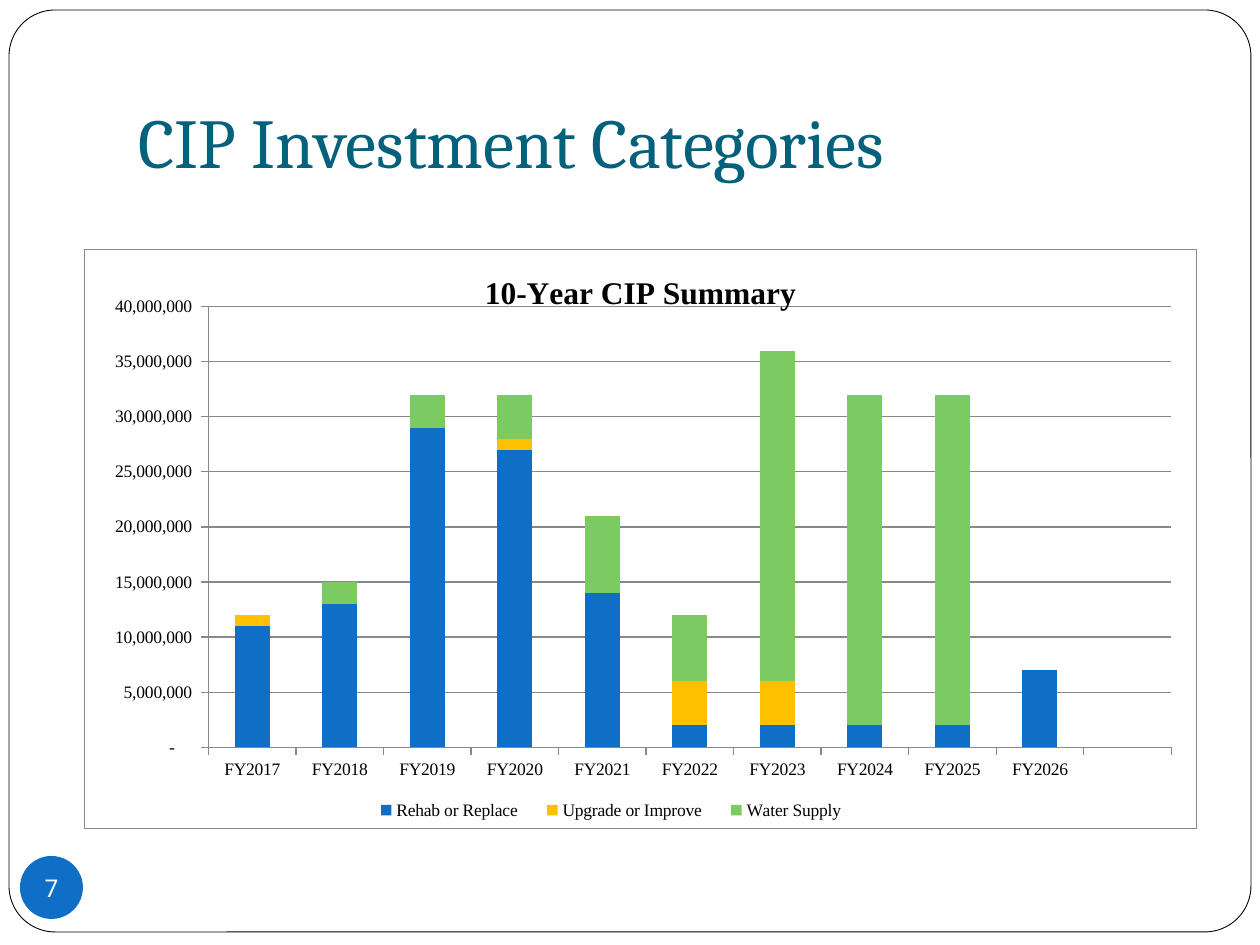
from lxml import etree
from pptx import Presentation, util as u
from pptx.chart.data import CategoryChartData
from pptx.dml.color import RGBColor
from pptx.enum import chart as charts, shapes, text
from pptx.oxml import parse_xml
from pptx.oxml.ns import nsdecls, qn

PX = 914400 / 126
BLUE, YELLOW, GREEN = "0F6FC6", "FFC000", "7CCA62"
BLACK, WHITE, GREY, TEAL = "000000", "FFFFFF", "888888", "04617B"
MILLION = 1_000_000

YEARS = [f"FY{year}" for year in range(2017, 2027)] + [""]  # last slot is blank
# Millions per fiscal year
CATEGORIES = [
    ("Rehab or Replace", BLUE, [11, 13, 29, 27, 14, 2, 2, 2, 2, 7, None]),
    ("Upgrade or Improve", YELLOW, [1, 0, 0, 1, 0, 4, 4, 0, 0, 0, None]),
    ("Water Supply", GREEN, [0, 2, 3, 4, 7, 6, 30, 30, 30, 0, None]),
]


def px(*lengths):
    return [u.Emu(round(length * PX)) for length in lengths]


def color(value):
    return RGBColor.from_string(value)


def style_font(font, name, size, value, bold=False):
    font.name, font.size, font.bold = name, u.Pt(size), bold
    font.color.rgb = color(value)


def style_line(line, value, width):
    line.color.rgb = color(value)
    line.width = u.Pt(width)


def make_layout(chart_size, place, inner=False):
    """Layout of a chart part; place is left, top and perhaps width, height in px."""
    layout = parse_xml(f"<c:layout {nsdecls('c')}><c:manualLayout/></c:layout>")
    settings = [("layoutTarget", "inner")] if inner else []
    settings += [("xMode", "edge"), ("yMode", "edge")]
    settings += [(tag, length / whole)
                 for tag, length, whole in zip("xywh", place, chart_size * 2)]
    for tag, value in settings:
        etree.SubElement(layout[0], qn(f"c:{tag}")).set("val", str(value))
    return layout


class SlideBuilder:
    heading_font, chart_font, number_font = "Cambria", "Times New Roman", "Roboto"

    def __init__(self, slide):
        self.slide = slide

    def shape(self, kind, box, fill, outline=None):
        shape = self.slide.shapes.add_shape(kind, *px(*box))
        shape.shadow.inherit = False
        shape.fill.solid()
        shape.fill.fore_color.rgb = color(fill)
        if outline:
            style_line(shape.line, outline, 0.5)
        else:
            shape.line.fill.background()
        return shape

    def frame(self, box):
        frame = self.shape(shapes.MSO_SHAPE.ROUNDED_RECTANGLE, box, WHITE, BLACK)
        frame.adjustments[0] = 0.05
        self.slide.shapes._spTree.insert(2, frame._element)  # behind the title

    def title(self, box, words):
        title = self.slide.shapes.title
        title.left, title.top, title.width, title.height = px(*box)
        frame = title.text_frame
        frame.text = words
        frame.vertical_anchor = text.MSO_ANCHOR.BOTTOM
        frame.margin_bottom = u.Inches(0.1)
        paragraph = frame.paragraphs[0]
        paragraph.alignment = text.PP_ALIGN.LEFT
        style_font(paragraph.font, self.heading_font, 40, TEAL)

    def badge(self, box, words):
        badge = self.shape(shapes.MSO_SHAPE.OVAL, box, BLUE)
        frame = badge.text_frame
        frame.margin_left = frame.margin_right = 0
        frame.margin_top = frame.margin_bottom = 0
        frame.word_wrap = False
        frame.vertical_anchor = text.MSO_ANCHOR.MIDDLE
        frame.text = words
        paragraph = frame.paragraphs[0]
        paragraph.alignment = text.PP_ALIGN.CENTER
        style_font(paragraph.font, self.number_font, 14, WHITE)

    def stacked_chart(self, box, heading):
        data = CategoryChartData(number_format="#,##0")
        data.categories = YEARS
        for name, _, amounts in CATEGORIES:
            data.add_series(name, [None if amount is None else amount * MILLION
                                   for amount in amounts])
        chart = self.slide.shapes.add_chart(
            charts.XL_CHART_TYPE.COLUMN_STACKED, *px(*box), data).chart
        style_font(chart.font, self.chart_font, 10, BLACK)

        # Columns
        plot = chart.plots[0]
        plot.gap_width, plot.overlap, plot.vary_by_categories = 150, 100, False
        for series, (_, fill, _) in zip(plot.series, CATEGORIES):
            series.format.fill.solid()
            series.format.fill.fore_color.rgb = color(fill)

        # Axes
        for axis in (chart.category_axis, chart.value_axis):
            axis.major_tick_mark = charts.XL_TICK_MARK.OUTSIDE
            style_font(axis.tick_labels.font, self.chart_font, 10, BLACK)
            style_line(axis.format.line, GREY, 0.75)
        values = chart.value_axis
        values.minimum_scale, values.maximum_scale = 0, 40 * MILLION
        values.major_unit = 5 * MILLION
        style_line(values.major_gridlines.format.line, GREY, 0.75)
        values.tick_labels.number_format = (
            r'_(* #,##0_);_(* \(#,##0\);_(* "-"??_);_(@_)')
        values.tick_labels.number_format_is_linked = False

        # Title and legend
        frame = chart.chart_title.text_frame
        frame.text = heading
        style_font(frame.paragraphs[0].font, self.chart_font, 18, BLACK, True)
        chart.has_legend = True
        chart.legend.position = charts.XL_LEGEND_POSITION.BOTTOM
        chart.legend.include_in_layout = False
        style_font(chart.legend.font, self.chart_font, 10, BLACK)

        # Places of title, legend and plot within the chart
        size = box[2:]
        plot_area = chart._chartSpace.chart.plotArea
        title, legend = chart.chart_title._element, chart.legend._element
        for part in (title, legend, plot_area):
            for old in part.findall(qn("c:layout")):
                part.remove(old)
        title.find(qn("c:tx")).addnext(make_layout(size, (395, 18)))
        legend.find(qn("c:legendPos")).addnext(
            make_layout(size, (273, 551, 508, 26)))
        plot_area.insert(0, make_layout(size, (124, 57, 964, 442), inner=True))

        # Chart background and border
        area = parse_xml(
            f'<c:spPr {nsdecls("c", "a")}>'
            f'<a:solidFill><a:srgbClr val="{WHITE}"/></a:solidFill>'
            f'<a:ln w="9525"><a:solidFill><a:srgbClr val="{GREY}"/></a:solidFill></a:ln>'
            '</c:spPr>')
        chart._chartSpace.chart.addnext(area)


def main():
    deck = Presentation()
    deck.slide_width, deck.slide_height = px(1260, 945)
    page = SlideBuilder(deck.slides.add_slide(deck.slide_layouts[5]))
    page.frame((9, 10, 1242, 922))
    page.title((126, 38, 1071, 157), "CIP Investment Categories")
    page.stacked_chart((84, 249, 1113, 580), "10-Year CIP Summary")
    page.badge((20, 856, 63, 63), "7")
    deck.save("out.pptx")


if __name__ == "__main__":
    main()
